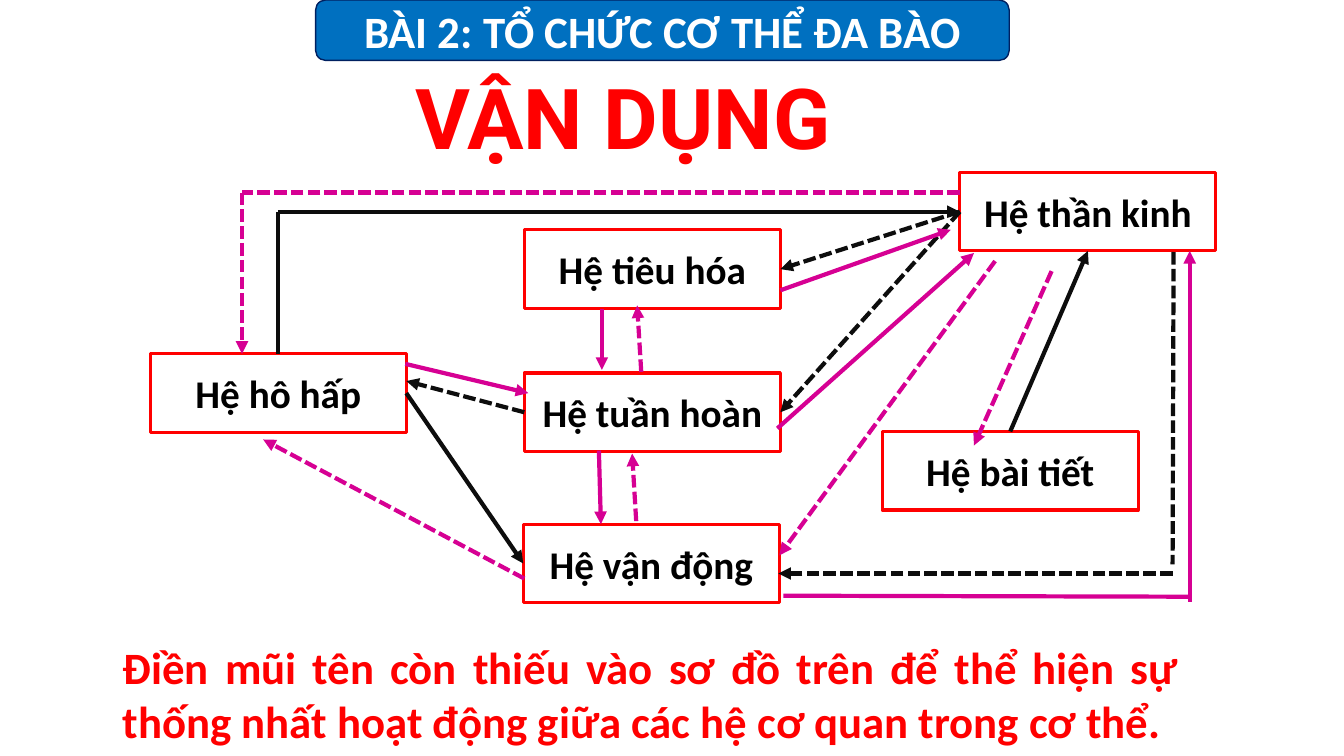
"""Builds the slide on how the body's organ systems are linked by arrows."""
from pptx import Presentation
from pptx.dml.color import RGBColor
from pptx.enum.dml import MSO_LINE as Dash
from pptx.enum.shapes import MSO_CONNECTOR as Connector, MSO_SHAPE as Shape
from pptx.enum.text import MSO_ANCHOR as Anchor, MSO_AUTO_SIZE as AutoSize, PP_ALIGN as Align
from pptx.oxml.ns import qn
from pptx.util import Pt
from lxml.etree import SubElement

PX = 9144
COLORS = {"blue": "0070C0", "navy": "002060", "red": "FF0000", "white": "FFFFFF",
          "black": "000000", "ink": "0D0D0D", "pink": "D60093"}
TOP, LEFT, BOTTOM, RIGHT = range(4)


def write(shape, text, size, color, font="Calibri", align=Align.CENTER):
    frame = shape.text_frame
    frame.word_wrap = True
    frame.text = text
    frame.paragraphs[0].alignment = align
    run_font = frame.paragraphs[0].runs[0].font
    run_font.name, run_font.size, run_font.bold = font, Pt(size), True
    run_font.color.rgb = RGBColor.from_string(COLORS[color])


def add_box(kind, place, fill, outline, weight):
    box = slide.shapes.add_shape(kind, *[n * PX for n in place])
    box.shadow.inherit = False
    box.fill.solid()
    box.fill.fore_color.rgb = RGBColor.from_string(COLORS[fill])
    box.line.color.rgb = RGBColor.from_string(COLORS[outline])
    box.line.width = Pt(weight)
    box.text_frame.vertical_anchor = Anchor.MIDDLE
    return box


prs = Presentation()
prs.slide_width, prs.slide_height = 1333 * PX, 750 * PX
slide = prs.slides.add_slide(prs.slide_layouts[6])

lesson = add_box(Shape.ROUNDED_RECTANGLE, (313, 0, 688, 60), "blue", "navy", 1)
write(lesson, "BÀI 2: TỔ CHỨC CƠ THỂ ĐA BÀO", 32, "white")

captions = [
    ((402, 60, 516, 111), "VẬN DỤNG", 60, "Roboto", Align.LEFT),
    ((112, 630, 1067, 118), "Điền mũi tên còn thiếu vào sơ đồ trên để thể hiện sự "
     "thống nhất hoạt động giữa các hệ cơ quan trong cơ thể.", 32, "Calibri", Align.JUSTIFY),
]
for place, text, size, font, align in captions:
    caption = slide.shapes.add_textbox(*[n * PX for n in place])
    write(caption, text, size, "red", font, align)
    caption.text_frame.auto_size = AutoSize.SHAPE_TO_FIT_TEXT

systems = {}
for name, x, y in [("tiêu hóa", 520, 228), ("vận động", 519, 520), ("hô hấp", 149, 351),
                   ("tuần hoàn", 520, 370), ("bài tiết", 875, 428), ("thần kinh", 952, 171)]:
    systems[name] = add_box(Shape.RECTANGLE, (x, y, 254, 78), "white", "red", 2.25)
    write(systems[name], f"Hệ {name}", 28, "black")

links = [
    ("ink", False, True, ("bài tiết", TOP), ("thần kinh", BOTTOM)),
    ("ink", False, True, (276, 210), ("thần kinh", LEFT)),
    ("ink", False, True, ("hô hấp", RIGHT), ("vận động", LEFT)),
    ("ink", False, False, (276, 210), ("hô hấp", TOP)),
    ("ink", True, True, ("thần kinh", LEFT), ("tiêu hóa", RIGHT)),
    ("ink", True, True, ("thần kinh", LEFT), ("tuần hoàn", RIGHT)),
    ("ink", True, True, ("tuần hoàn", LEFT), (403, 378)),
    ("ink", True, True, (1163, 569), (772, 569)),
    ("ink", True, False, (1164, 250), (1163, 560)),
    ("pink", True, True, (240, 191), (240, 351)),
    ("pink", False, True, (402, 361), (524, 390)),
    ("pink", True, True, (987, 259), (773, 551)),
    ("pink", True, True, (1043, 269), (966, 442)),
    ("pink", True, False, (952, 191), (240, 191)),
    ("pink", True, True, (520, 574), (261, 436)),
    ("pink", False, True, (774, 288), (943, 228)),
    ("pink", False, True, (771, 425), (966, 251)),
    ("pink", False, True, (597, 307), (597, 367)),
    ("pink", False, True, (594, 447), (596, 520)),
    ("pink", True, True, (631, 517), (627, 450)),
    ("pink", True, True, (636, 369), (632, 303)),
    ("pink", False, True, (1180, 597), (1180, 249)),
    ("pink", False, False, (1180, 592), (777, 591)),
]
for color, dashed, arrow, start, end in links:
    link = slide.shapes.add_connector(Connector.STRAIGHT, 0, 0, 0, 0)
    if start[0] in systems:
        link.begin_connect(systems[start[0]], start[1])
    else:
        link.begin_x, link.begin_y = start[0] * PX, start[1] * PX
    if end[0] in systems:
        link.end_connect(systems[end[0]], end[1])
    else:
        link.end_x, link.end_y = end[0] * PX, end[1] * PX
    link.line.color.rgb = RGBColor.from_string(COLORS[color])
    link.line.width = Pt(3)
    if dashed:
        link.line.dash_style = Dash.SQUARE_DOT
    if arrow:
        SubElement(link.line._get_or_add_ln(), qn("a:tailEnd"), type="triangle")
    SubElement(link._element.spPr, qn("a:effectLst"))

prs.save("out.pptx")
